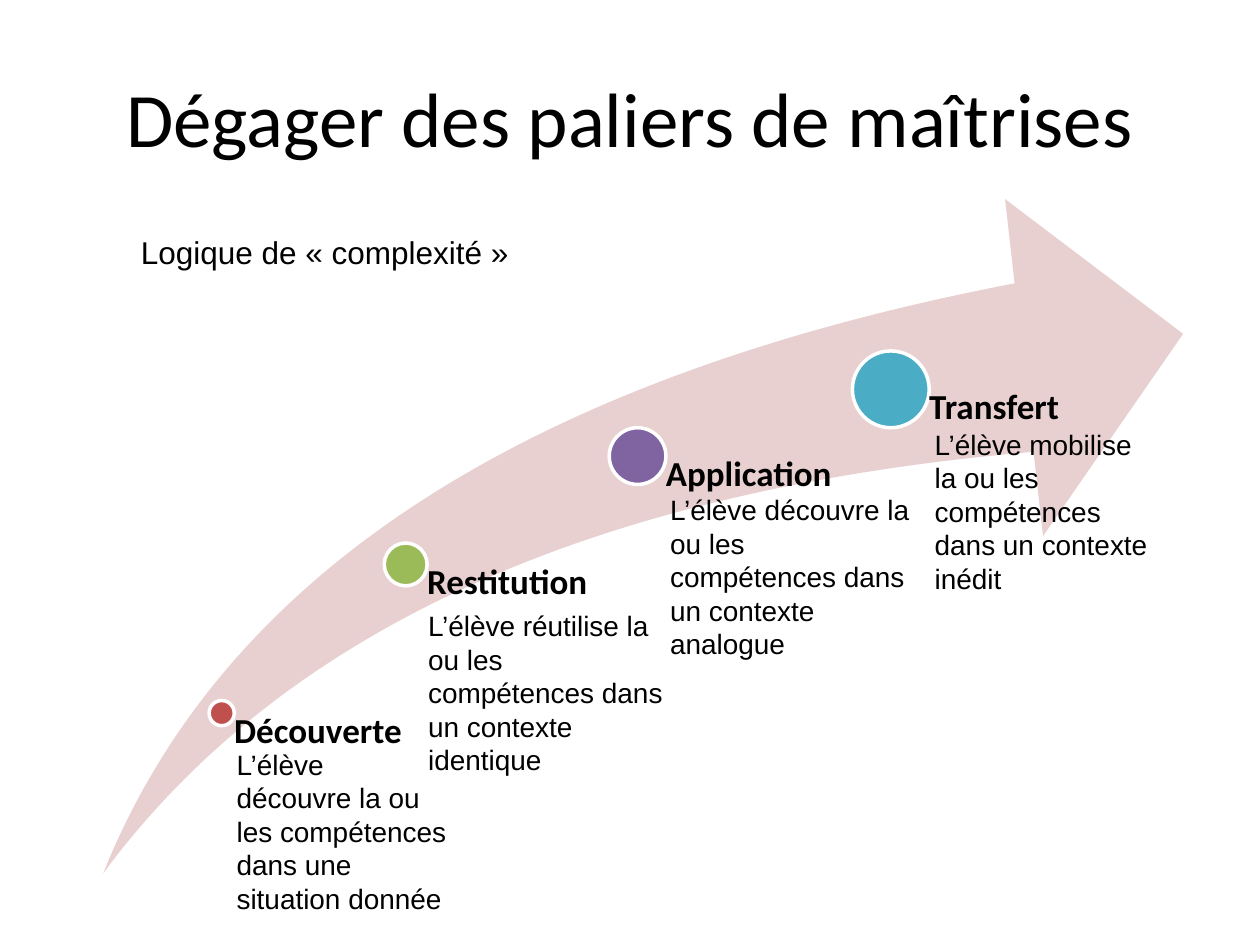
from pptx import Presentation
from pptx.dml.color import RGBColor
from pptx.enum.shapes import MSO_SHAPE
from pptx.enum.text import MSO_ANCHOR, PP_ALIGN
from pptx.util import Inches, Pt

OVAL, SWOOSH = MSO_SHAPE.OVAL, MSO_SHAPE.SWOOSH_ARROW
TOP, MIDDLE = MSO_ANCHOR.TOP, MSO_ANCHOR.MIDDLE
LEFT, CENTER = PP_ALIGN.LEFT, PP_ALIGN.CENTER

BLACK = RGBColor(0x00, 0x00, 0x00)
WHITE = RGBColor(0xFF, 0xFF, 0xFF)
PINK = RGBColor(0xE8, 0xD0, 0xD0)
RED = RGBColor(0xC0, 0x50, 0x4D)
GREEN = RGBColor(0x9B, 0xBB, 0x59)
PURPLE = RGBColor(0x80, 0x64, 0xA2)
BLUE = RGBColor(0x4B, 0xAC, 0xC6)

# The slide is a grid of 100 columns by 75 rows
COLUMNS, ROWS = 100, 75
ARROW_BOTTOM = 69.3

# Name, colour, circle centre (column, row), diameter, label width,
# description (column, row, width), description text
STAGES = [
    ("Découverte", RED, (17.6, 56.6), 2, 14.6, (17.8, 58.8, 18.6),
     "L’élève découvre la ou les compétences dans une situation donnée"),
    ("Restitution", GREEN, (32.2, 44.8), 3.4, 18, (33, 47.8, 20.6),
     "L’élève réutilise la ou les compétences dans un contexte identique"),
    ("Application", PURPLE, (50.6, 36.2), 4.5, 18, (52.2, 38.6, 21),
     "L’élève découvre la ou les compétences dans un contexte analogue"),
    ("Transfert", BLUE, (70.7, 30.9), 6.1, 18, (73.2, 33.4, 19.3),
     "L’élève mobilise la ou les compétences dans un contexte inédit"),
]


class SlideBuilder:
    """Holds the style and the current slide."""

    heading_font = "Calibri"
    body_font = "Arial"
    text_color = BLACK

    def __init__(self, presentation):
        self.column = presentation.slide_width / COLUMNS
        self.row = presentation.slide_height / ROWS
        self.slide = presentation.slides.add_slide(presentation.slide_layouts[6])

    def box(self, left, top, width, height):
        return (round(left * self.column), round(top * self.row),
                round(width * self.column), round(height * self.row))

    def shape(self, kind, left, top, width, height, fill, outline=None):
        shape = self.slide.shapes.add_shape(kind, *self.box(left, top, width, height))
        shape.shadow.inherit = False
        shape.fill.solid()
        shape.fill.fore_color.rgb = fill
        if outline is None:
            shape.line.fill.background()
        else:
            shape.line.color.rgb = outline
            shape.line.width = Pt(2)
        return shape

    def text(self, wording, left, top, width, height, size, font,
             bold=False, align=LEFT, anchor=TOP):
        shape = self.slide.shapes.add_textbox(*self.box(left, top, width, height))
        frame = shape.text_frame
        frame.word_wrap = True
        frame.vertical_anchor = anchor
        paragraph = frame.paragraphs[0]
        paragraph.alignment = align
        run = paragraph.add_run()
        run.text = wording
        run.font.name = font
        run.font.size = Pt(size)
        run.font.bold = bold
        run.font.color.rgb = self.text_color
        return frame

    def title(self, wording):
        self.text(wording, 5, 3, 90, 12.5, 44, self.heading_font,
                  align=CENTER, anchor=MIDDLE)

    def arrow(self, left, top, width, height):
        arrow = self.shape(SWOOSH, left, top, width, height, PINK)
        arrow.adjustments[0] = 0.25
        arrow.adjustments[1] = 0.25

    def milestone(self, name, color, center, diameter, label_width):
        """A circle, with a label that starts at its centre and clears its radius."""
        x, y = center
        radius = diameter / 2
        self.shape(OVAL, x - radius, y - radius, diameter, diameter, color, WHITE)
        frame = self.text(name, x, y, label_width, ARROW_BOTTOM - y, 20,
                          self.heading_font, bold=True)
        frame.margin_left = round(radius * self.column)
        frame.margin_top = frame.margin_right = frame.margin_bottom = 0
        frame.paragraphs[0].line_spacing = 0.9

    def description(self, wording, left, top, width):
        self.text(wording, left, top, width, 14.5, 16, self.body_font)


def main():
    presentation = Presentation()
    presentation.slide_width = Inches(10)
    presentation.slide_height = Inches(7.5)
    builder = SlideBuilder(presentation)

    builder.title("Dégager des paliers de maîtrises")

    # Rising arrow with its milestones
    builder.arrow(8.2, 15.8, 85.7, ARROW_BOTTOM - 15.8)
    for name, color, center, diameter, label_width, _, _ in STAGES:
        builder.milestone(name, color, center, diameter, label_width)

    # Descriptions under the milestones
    for *_, place, wording in STAGES:
        builder.description(wording, *place)

    # Subtitle
    builder.text("Logique de « complexité »", 10.2, 18, 43.4, 4, 18,
                 builder.body_font)

    presentation.save("out.pptx")


if __name__ == "__main__":
    main()
